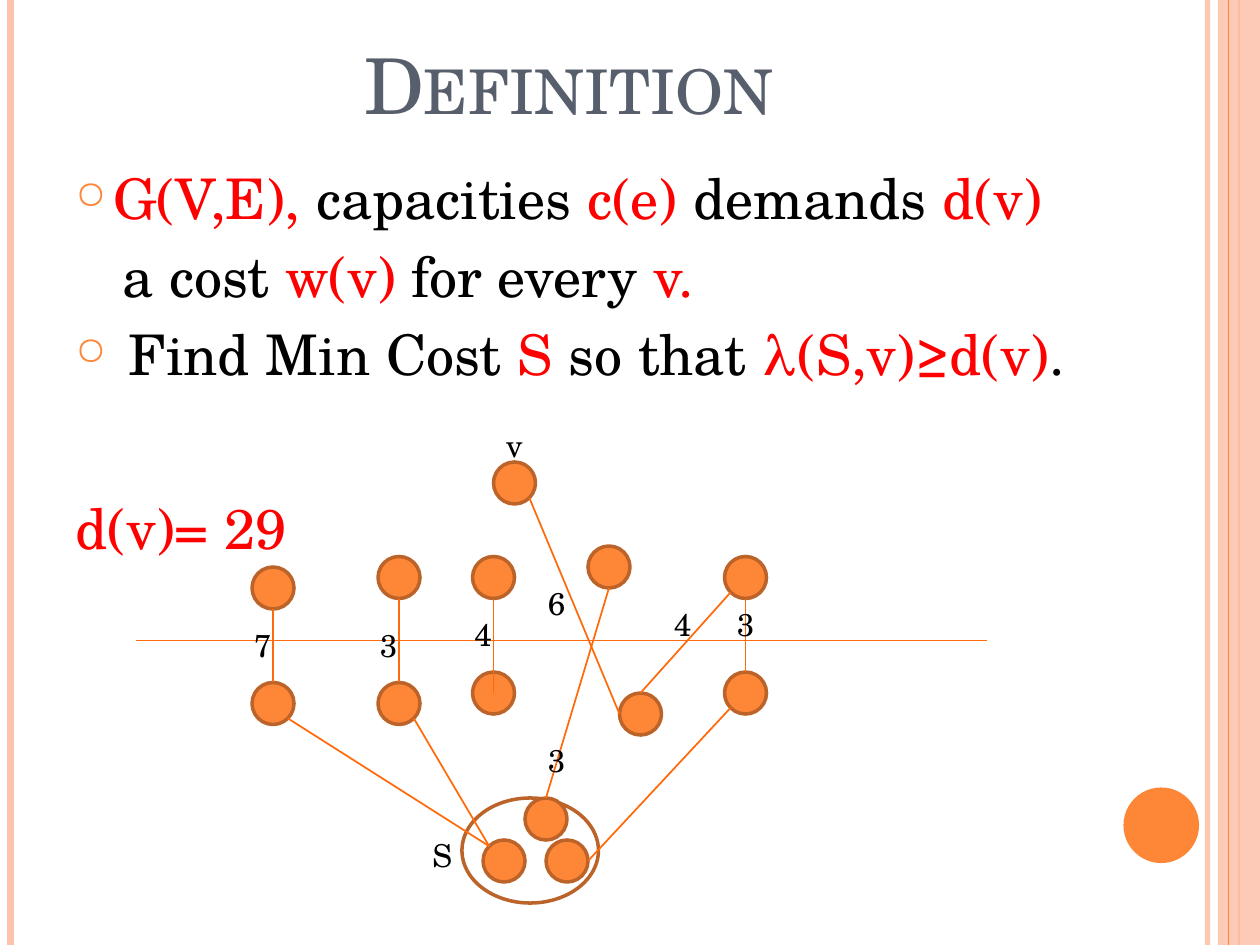
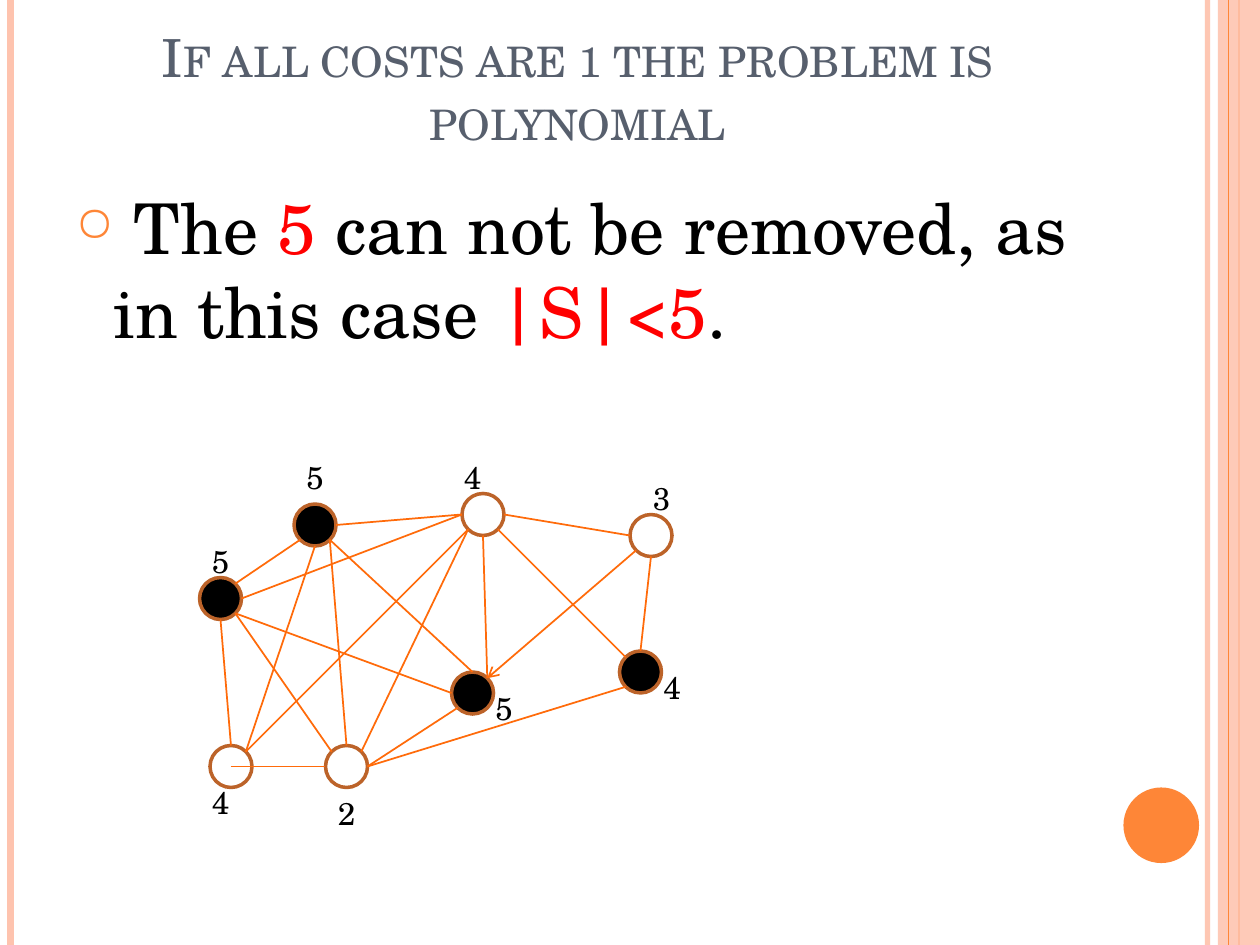
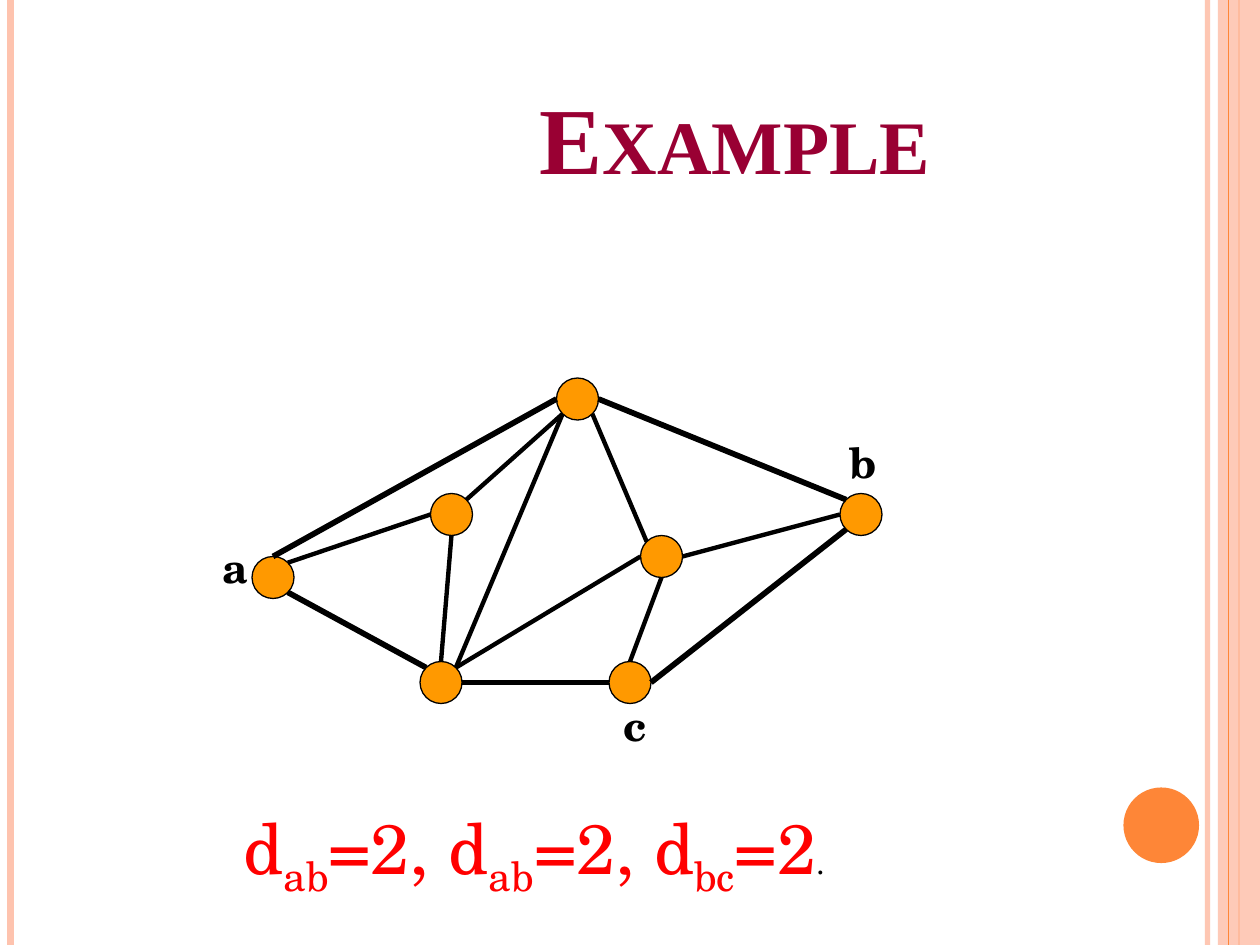
import lxml.etree
import pptx
import pptx.dml.color
import pptx.enum.shapes
import pptx.enum.text
import pptx.oxml.ns
import pptx.util

RGB = pptx.dml.color.RGBColor
KIND = pptx.enum.shapes.MSO_SHAPE
ALIGN = pptx.enum.text.PP_ALIGN
ANCHOR = pptx.enum.text.MSO_ANCHOR
Pt = pptx.util.Pt

ORANGE = RGB(0xFE, 0x86, 0x37)
PEACH = RGB(0xFE, 0xC3, 0xAE)
BROWN = RGB(0xBC, 0x63, 0x29)
EDGE = RGB(0xFF, 0x6B, 0x0A)
AMBER = RGB(0xFF, 0x99, 0x00)
SLATE = RGB(0x57, 0x5F, 0x6D)
WINE = RGB(0x99, 0x00, 0x33)
RED = RGB(0xFF, 0x00, 0x00)
BLACK = RGB(0x00, 0x00, 0x00)

SERIF = "TeX Gyre Schola"
TIMES = "Times New Roman"
COLS, ROWS = 120, 90
RADIUS = 2
DIAG = 1.41
PORTS = {
    "c": (0, 0), "n": (0, -RADIUS), "s": (0, RADIUS), "e": (RADIUS, 0), "w": (-RADIUS, 0),
    "ne": (DIAG, -DIAG), "nw": (-DIAG, -DIAG), "se": (DIAG, DIAG), "sw": (-DIAG, DIAG),
}


def cell(count):
    """Turn grid cells, twelve to the inch, into a length."""
    return pptx.util.Inches(count / 12)


def tag(parent, name, **attrs):
    """Append a drawing element with its attributes."""
    node = lxml.etree.SubElement(parent, pptx.oxml.ns.qn(name))
    for key, value in attrs.items():
        node.set(key, str(value))
    return node


def fade(shape, share):
    """Set the opacity of the first colour of a shape, in percent."""
    color = next(shape._element.spPr.iter(pptx.oxml.ns.qn("a:srgbClr")))
    tag(color, "a:alpha", val=share * 1000)


def draw(slide, kind, box, fill=None, line=None, width=1):
    """Add a preset shape on a box of grid cells."""
    shape = slide.shapes.add_shape(kind, *map(cell, box))
    shape.shadow.inherit = False
    if fill is None:
        shape.fill.background()
    else:
        shape.fill.solid()
        shape.fill.fore_color.rgb = fill
    if line is None:
        shape.line.fill.background()
    else:
        shape.line.color.rgb = line
        shape.line.width = Pt(width)
    return shape


def rule(slide, start, end, color, width, arrow=False):
    """Add a straight line between two grid points."""
    straight = pptx.enum.shapes.MSO_CONNECTOR.STRAIGHT
    line = slide.shapes.add_connector(straight, *map(cell, (*start, *end)))
    line.line.color.rgb = color
    line.line.width = Pt(width)
    if arrow:
        tag(line.line._get_or_add_ln(), "a:tailEnd", type="arrow")
    tag(line._element.spPr, "a:effectLst")
    return line


def write(para, parts, size, font=SERIF, bold=False):
    """Fill a paragraph with runs of text and colour."""
    for text, color in parts:
        run = para.add_run()
        run.text = text
        run.font.name = font
        run.font.size = Pt(size)
        run.font.bold = bold
        run.font.color.rgb = color


def frame(slide, box):
    """Add a wrapping text box and return its text frame."""
    area = slide.shapes.add_textbox(*map(cell, box)).text_frame
    area.word_wrap = True
    return area


def label(slide, text, box, size=18, color=BLACK, bold=False, align=ALIGN.LEFT):
    """Add one line of text."""
    para = frame(slide, box).paragraphs[0]
    para.alignment = align
    write(para, [(text, color)], size, bold=bold)


def title(slide, text, box, size, color=SLATE, font=SERIF, bold=False):
    """Add a centred title in small capitals."""
    area = frame(slide, box)
    area.vertical_anchor = ANCHOR.BOTTOM
    para = area.paragraphs[0]
    para.alignment = ALIGN.CENTER
    write(para, [(text, color)], size, font, bold)
    para.runs[0].font._element.set("cap", "small")


def body(slide, top, size, items):
    """Add paragraphs, each with a bullet or a plain indent."""
    area = frame(slide, (6, top, 98, 64))
    for rank, (dot, parts) in enumerate(items):
        para = area.add_paragraph() if rank else area.paragraphs[0]
        para.space_before = Pt(6)
        write(para, parts, size)
        props = para._p.get_or_add_pPr()
        props.set("marL", str(cell(3.6 if dot else 4.5)))
        props.set("indent", str(-cell(3.6) if dot else 0))
        if dot:
            tag(tag(props, "a:buClr"), "a:srgbClr", val=ORANGE)
            tag(props, "a:buSzPct", val=70000)
            tag(props, "a:buChar", char="○")


def base(deck):
    """Add a blank slide with the side bands and the disc."""
    slide = deck.slides.add_slide(deck.slide_layouts[6])

    def band(col, color, width):
        """Add a line down the whole slide."""
        return rule(slide, (col, 0), (col, ROWS), color, width)

    fade(band(115, PEACH, 3), 93)
    band(1, PEACH, 4.5)
    band(118, ORANGE, 1.5)
    fade(draw(slide, KIND.RECTANGLE, (116, 0, 4, ROWS), PEACH), 87)
    band(117, ORANGE, 0.75)
    draw(slide, KIND.OVAL, (107, 75, 7.2, 7.2), ORANGE)
    return slide


def dots(slide, nodes, fill, line=BROWN, width=2, full=None):
    """Add a disc on each node; only those named in full are filled, if given."""
    for name, (col, row) in nodes.items():
        paint = fill if full is None or name in full else None
        box = (col - RADIUS, row - RADIUS, 2 * RADIUS, 2 * RADIUS)
        draw(slide, KIND.OVAL, box, paint, line, width)


def links(slide, nodes, edges, color=EDGE, width=1, arrow=False):
    """Join nodes; each edge reads as node.port node.port."""
    def spot(end):
        """Find the grid point of a port."""
        name, side = end.split(".")
        return tuple(a + b for a, b in zip(nodes[name], PORTS[side]))

    for edge in edges:
        start, end = edge.split()
        rule(slide, spot(start), spot(end), color, width, arrow)


def define(deck):
    """Build the slide with the definition and its cut."""
    slide = base(deck)
    title(slide, "Definition ", (6, -2, 98, 15), 44)
    body(slide, 15, 32, [
        (True, [("G(V,E),", RED), (" capacities ", BLACK), ("c(e)", RED),
                (" demands ", BLACK), ("d(v)", RED)]),
        (False, [("a cost ", BLACK), ("w(v) ", RED), ("for every ", BLACK), ("v.", RED)]),
        (True, [(" Find Min Cost ", BLACK), ("S ", RED), ("so that ", BLACK),
                ("λ(S,v)≥d(v)", RED), (".", BLACK)]),
    ])
    label(slide, "d(v)= 29", (6, 46.4, 31, 7.7), 32, RED)

    nodes = {
        "p1": (26, 56), "p2": (26, 67), "q1": (38, 55), "q2": (38, 67),
        "r1": (47, 55), "r2": (47, 66), "v": (49, 46), "t": (58, 54),
        "u": (61, 68), "w1": (71, 55), "w2": (71, 66),
        "s1": (48, 82), "s2": (54, 82), "s3": (52, 78),
    }
    rule(slide, (13, 61), (94, 61), EDGE, 1)
    draw(slide, KIND.OVAL, (44, 76, 13, 10), None, BROWN, 2)
    dots(slide, nodes, ORANGE)
    links(slide, nodes, [
        "p1.s p2.n", "q1.s q2.n", "r1.s r2.c", "w1.s w2.n", "t.s s3.n",
        "v.se u.w", "w1.sw u.n", "s2.e w2.sw", "s1.nw p2.se", "s1.nw q2.se",
    ])
    for text, col, row, width in [
        ("v", 47, 40, 14), ("7", 23, 59, 7), ("3", 35, 59, 8), ("S", 40, 79, 7),
        ("4", 44, 58, 7), ("6", 51, 55, 3), ("3", 51, 70, 12),
        ("4", 63, 57, 13), ("3", 69, 57, 18),
    ]:
        label(slide, text, (col, row, width, 4.8))


def costs(deck):
    """Build the slide on unit costs."""
    slide = base(deck)
    title(slide, "If all costs are 1 the problem is polynomial", (6, 0, 98, 15), 30)
    body(slide, 17, 40, [
        (True, [(" The ", BLACK), ("5", RED), (" can not be removed, as in this case ", BLACK),
                ("|S|<5", RED), (".", BLACK)]),
    ])
    nodes = {
        "a": (21, 57), "b": (30, 50), "c": (22, 73), "d": (33, 73),
        "e": (45, 66), "f": (46, 49), "g": (61, 64), "h": (62, 51),
    }
    dots(slide, nodes, BLACK, full="abeg")
    links(slide, nodes, [
        "g.nw f.se", "h.w f.e", "h.s g.n", "a.ne b.sw", "b.e f.w", "a.s c.n",
        "e.n b.se", "c.ne f.sw", "c.c d.w", "d.e e.sw", "e.w a.se", "e.ne f.s",
        "b.s c.ne", "b.se d.n", "g.sw d.e", "d.ne f.sw", "a.e f.w", "a.se d.nw",
    ])
    links(slide, nodes, ["h.sw e.ne"], arrow=True)
    for text, col, row, width in [
        ("3", 61, 45, 28), ("4", 62, 63, 26), ("4", 43, 43, 22), ("5", 46, 65, 14),
        ("5", 28, 43, 22), ("5", 19, 51, 17), ("2", 31, 75, 23), ("4", 19, 74, 11),
    ]:
        label(slide, text, (col, row, width, 4.8))


def sample(deck):
    """Build the slide with the example graph."""
    slide = base(deck)
    title(slide, "Example", (28, 0, 84, 19), 54, WINE, TIMES, True)
    nodes = {
        "a": (26, 55), "b": (82, 49), "c": (60, 65), "d": (42, 65),
        "e": (55, 38), "f": (43, 49), "g": (63, 53),
    }
    dots(slide, nodes, AMBER, BLACK, 0.75)
    links(slide, nodes, [
        "a.ne f.w", "f.ne e.sw", "d.ne g.w", "d.ne e.sw",
        "g.s c.n", "g.e b.w", "f.s d.n", "e.se g.nw",
    ], BLACK, 2.5)
    links(slide, nodes, ["a.n e.w", "e.e b.nw", "d.e c.w", "c.e b.sw", "a.se d.nw"], BLACK, 3.25)
    for text, col, row, width in [("a", 20, 51, 4), ("b", 75, 41, 14.4), ("c", 56, 66, 9)]:
        label(slide, text, (col, row, width, 6), 24, bold=True, align=ALIGN.CENTER)

    para = frame(slide, (22, 76, 62, 9.2)).paragraphs[0]
    parts = ["d", "ab", "=2, d", "ab", "=2, d", "bc", "=2"]
    write(para, [(part, RED) for part in parts], 40)
    for run in para.runs[1::2]:
        run.font._element.set("baseline", "-25000")
    write(para, [(".", BLACK)], 18)


def main():
    """Build and save the three slides."""
    deck = pptx.Presentation()
    deck.slide_width, deck.slide_height = cell(COLS), cell(ROWS)
    define(deck)
    costs(deck)
    sample(deck)
    deck.save("out.pptx")


if __name__ == "__main__":
    main()
